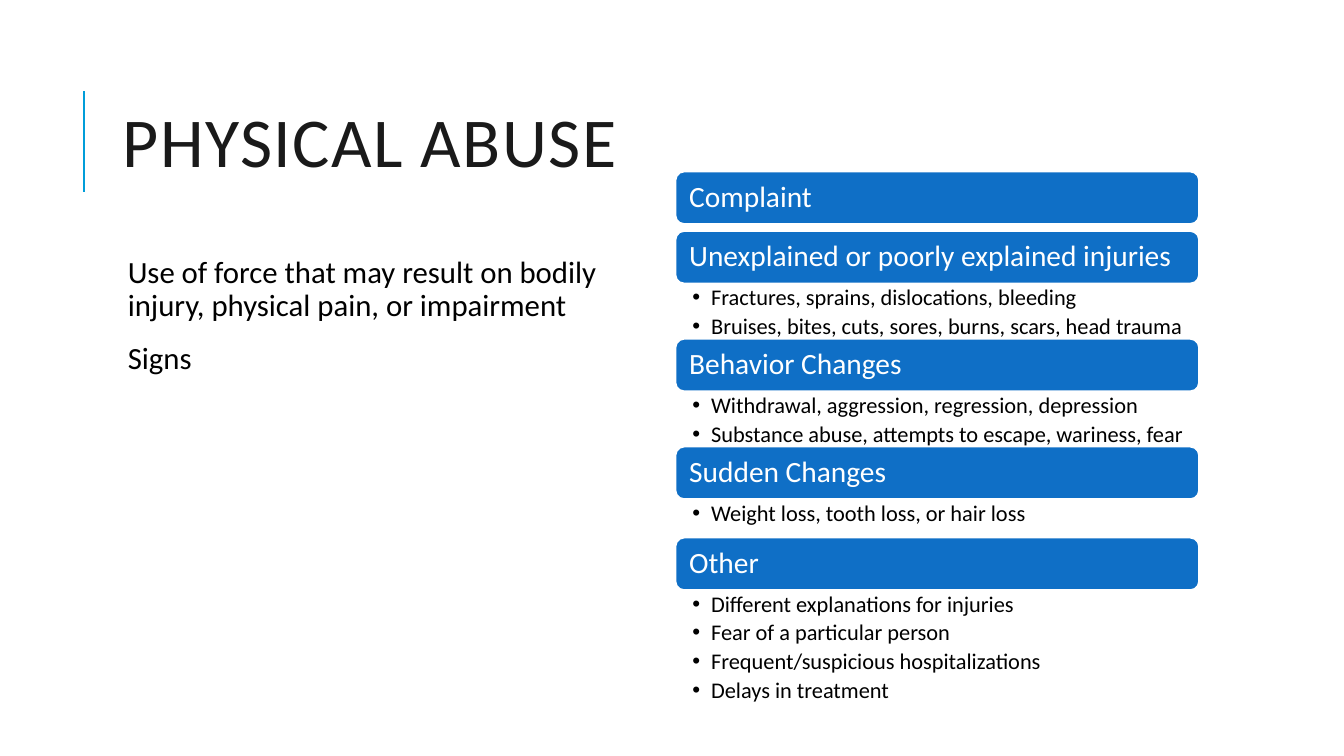
import pptx
import pptx.util
import pptx.dml.color
import pptx.enum.shapes
import pptx.enum.text
import lxml.etree

Pt = pptx.util.Pt
ANCHOR = pptx.enum.text.MSO_ANCHOR
FONT = "Calibri"
COLORS = {"accent": "009DD9", "bar": "0F6FC6", "white": "FFFFFF",
          "title": "1A1A1A", "text": "000000"}
BAR_HEIGHT = 37.5

# Heading, its bullets, and the height between its bar and the next one
SIGNS = [
    ("Complaint", [], 5),
    ("Unexplained or poorly explained injuries",
     ["Fractures, sprains, dislocations, bleeding",
      "Bruises, bites, cuts, sores, burns, scars, head trauma"], 39.5),
    ("Behavior Changes",
     ["Withdrawal, aggression, regression, depression",
      "Substance abuse, attempts to escape, wariness, fear"], 39.5),
    ("Sudden Changes", ["Weight loss, tooth loss, or hair loss"], 27.5),
    ("Other",
     ["Different explanations for injuries", "Fear of a particular person",
      "Frequent/suspicious hospitalizations", "Delays in treatment"], 78.5),
]


def rgb(name):
    return pptx.dml.color.RGBColor.from_string(COLORS[name])


def add_child(parent, tag, **attributes):
    child = lxml.etree.SubElement(parent, pptx.oxml.ns.qn(tag))
    for key, value in attributes.items():
        child.set(key, value)


def set_frame(frame, insets, anchor):
    frame.word_wrap = True
    frame.auto_size = pptx.enum.text.MSO_AUTO_SIZE.NONE
    frame.vertical_anchor = anchor
    (frame.margin_left, frame.margin_top,
     frame.margin_right, frame.margin_bottom) = map(Pt, insets)


def write(frame, lines, size, color, spacing=0.9, before=0, after=0):
    """Fill the frame with one left-aligned paragraph per line."""
    frame.text = "\n".join(lines)
    for paragraph in frame.paragraphs:
        paragraph.alignment = pptx.enum.text.PP_ALIGN.LEFT
        paragraph.line_spacing = spacing
        paragraph.space_before = Pt(before)
        paragraph.space_after = Pt(after)
        paragraph.font.name = FONT
        paragraph.font.size = Pt(size)
        paragraph.font.color.rgb = rgb(color)


def add_text(slide, left, top, width, height, insets):
    box = slide.shapes.add_textbox(Pt(left), Pt(top), Pt(width), Pt(height))
    set_frame(box.text_frame, insets, ANCHOR.TOP)
    return box.text_frame


def add_title(slide, left, top, width, height):
    """Place the title and the accent rule to its left."""
    title = slide.shapes.title
    title.left, title.top = Pt(left), Pt(top)
    title.width, title.height = Pt(width), Pt(height)
    set_frame(title.text_frame, (7.2, 3.6, 7.2, 3.6), ANCHOR.MIDDLE)
    write(title.text_frame, ["PHYSICAL ABUSE"], 50, "title", spacing=0.8)
    title.text_frame.paragraphs[0].runs[0].font._element.set("spc", "100")

    x = Pt(left - 20.5)
    rule = slide.shapes.add_connector(
        pptx.enum.shapes.MSO_CONNECTOR.STRAIGHT,
        x, Pt(top + 91), x, Pt(top + 19))
    rule.line.color.rgb = rgb("accent")
    rule.line.width = Pt(1.5)
    add_child(rule._element.spPr, "a:effectLst")


def add_definition(slide, left, top, width, height):
    frame = add_text(slide, left, top, width, height, (10.8, 3.6, 3.6, 3.6))
    write(frame, ["Use of force that may result on bodily injury, "
                  "physical pain, or impairment", "Signs"],
          22, "text", before=12, after=2)


def add_bar(slide, heading, left, top, width):
    bar = slide.shapes.add_shape(
        pptx.enum.shapes.MSO_SHAPE.ROUNDED_RECTANGLE,
        Pt(left), Pt(top), Pt(width), Pt(BAR_HEIGHT))
    bar.shadow.inherit = False
    bar.fill.solid()
    bar.fill.fore_color.rgb = rgb("bar")
    bar.line.color.rgb = rgb("white")
    bar.line.width = Pt(1.25)
    set_frame(bar.text_frame, (8, 0, 8, 0), ANCHOR.MIDDLE)
    write(bar.text_frame, [heading], 21, "white")


def add_bullets(slide, bullets, left, top, width, height):
    frame = add_text(slide, left, top, width, height, (12, 2, 11, 2))
    write(frame, bullets, 16, "text", after=3.2)
    for paragraph in frame.paragraphs:
        properties = paragraph._p.get_or_add_pPr()
        properties.set("marL", str(Pt(13.5)))
        properties.set("indent", str(Pt(-13.5)))
        add_child(properties, "a:buFont", typeface="Arial")
        add_child(properties, "a:buChar", char="•")


def add_signs(slide, left, top, width):
    """Stack the heading bars, each followed by its bullets."""
    for heading, bullets, gap in SIGNS:
        add_bar(slide, heading, left, top, width)
        top += BAR_HEIGHT
        if bullets:
            add_bullets(slide, bullets, left, top, width, gap)
        top += gap


def main():
    presentation = pptx.Presentation()
    presentation.slide_width, presentation.slide_height = Pt(960), Pt(540)
    slide = presentation.slides.add_slide(presentation.slide_layouts[5])
    add_title(slide, 80.5, 46, 765.5, 118)
    add_definition(slide, 80.5, 180, 374.5, 317)
    add_signs(slide, 482.5, 122.5, 374)
    presentation.save("out.pptx")


if __name__ == "__main__":
    main()
